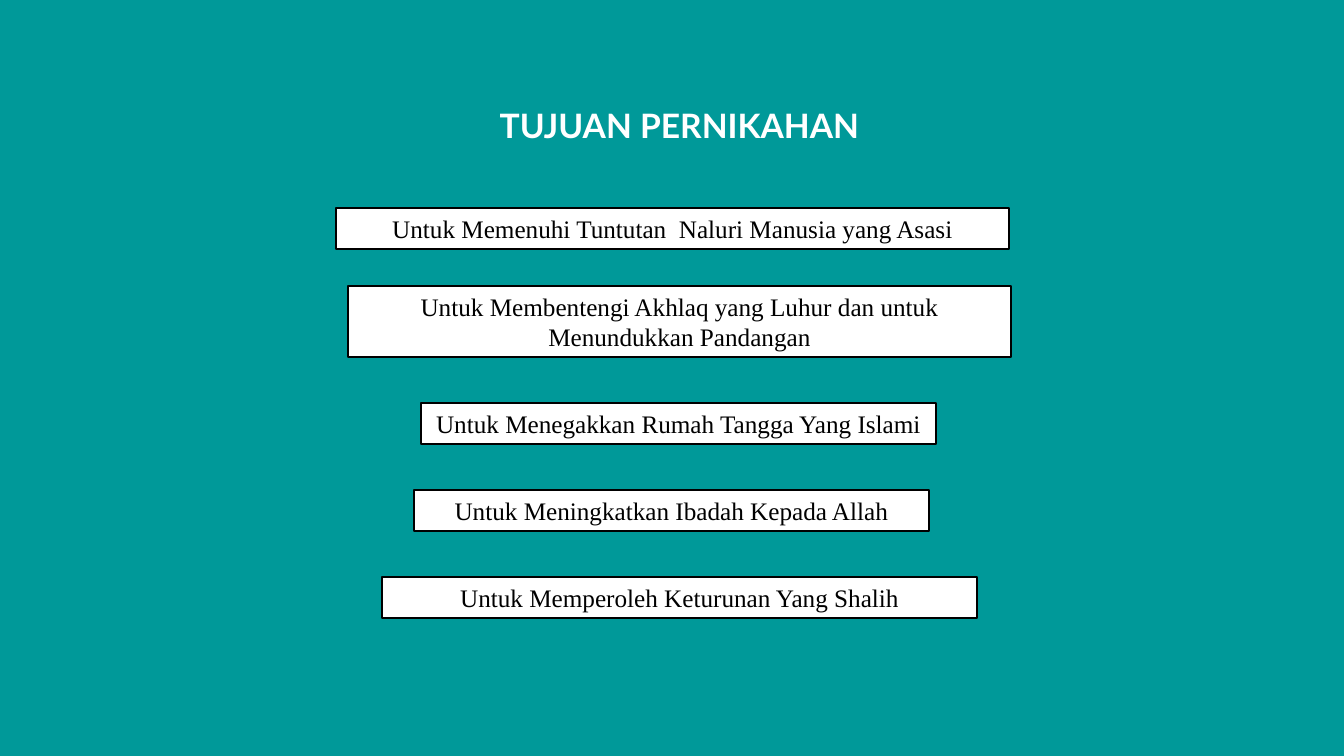
from dataclasses import dataclass

import pptx
import pptx.dml.color
import pptx.enum.shapes
import pptx.enum.text
import pptx.util

EMU_PER_PX = 914400 / 100.8
SLIDE_WIDTH, SLIDE_HEIGHT = 1344, 756


@dataclass(frozen=True)
class Theme:
    teal: str = "009999"
    white: str = "FFFFFF"
    black: str = "000000"
    title_font: str = "Lato"
    goal_font: str = "Times New Roman"
    title_size: int = 24
    goal_size: int = 18
    border: int = 1


@dataclass(frozen=True)
class Goal:
    text: str
    left: int
    top: int
    width: int
    height: int = 41


THEME = Theme()

GOALS = [
    Goal("Untuk Memenuhi Tuntutan  Naluri Manusia yang Asasi", 336, 208, 673),
    Goal("Untuk Membentengi Akhlaq yang Luhur dan untuk Menundukkan Pandangan", 348, 286, 663, 71),
    Goal("Untuk Menegakkan Rumah Tangga Yang Islami", 421, 403, 515),
    Goal("Untuk Meningkatkan Ibadah Kepada Allah", 414, 490, 515),
    Goal("Untuk Memperoleh Keturunan Yang Shalih", 382, 577, 595),
]


def px(length: int) -> int:
    return round(length * EMU_PER_PX)


def rgb(code: str) -> pptx.dml.color.RGBColor:
    return pptx.dml.color.RGBColor.from_string(code)


def add_panel(slide, left: int, top: int, width: int, height: int, fill: str, border: str | None = None):
    panel = slide.shapes.add_shape(
        pptx.enum.shapes.MSO_SHAPE.RECTANGLE, px(left), px(top), px(width), px(height)
    )
    panel.shadow.inherit = False
    panel.fill.solid()
    panel.fill.fore_color.rgb = rgb(fill)
    if border is None:
        panel.line.fill.background()
    else:
        panel.line.color.rgb = rgb(border)
        panel.line.width = pptx.util.Pt(THEME.border)
    return panel


def write_text(shape, text: str, *, font: str, size: int, color: str, bold: bool = False) -> None:
    frame = shape.text_frame
    frame.word_wrap = True
    frame.auto_size = pptx.enum.text.MSO_AUTO_SIZE.SHAPE_TO_FIT_TEXT
    frame.vertical_anchor = pptx.enum.text.MSO_ANCHOR.TOP
    paragraph = frame.paragraphs[0]
    paragraph.alignment = pptx.enum.text.PP_ALIGN.CENTER
    run = paragraph.add_run()
    run.text = text
    run.font.name = font
    run.font.size = pptx.util.Pt(size)
    run.font.bold = bold
    run.font.color.rgb = rgb(color)


def add_goal(slide, goal: Goal) -> None:
    panel = add_panel(slide, goal.left, goal.top, goal.width, goal.height, THEME.white, THEME.black)
    write_text(panel, goal.text, font=THEME.goal_font, size=THEME.goal_size, color=THEME.black)


def main() -> None:
    presentation = pptx.Presentation()
    presentation.slide_width = px(SLIDE_WIDTH)
    presentation.slide_height = px(SLIDE_HEIGHT)
    slide = presentation.slides.add_slide(presentation.slide_layouts[6])

    add_panel(slide, 0, 0, SLIDE_WIDTH, SLIDE_HEIGHT, THEME.teal)
    title = slide.shapes.add_textbox(px(454), px(100), px(451), px(50))
    write_text(
        title, "TUJUAN PERNIKAHAN",
        font=THEME.title_font, size=THEME.title_size, color=THEME.white, bold=True,
    )
    for goal in GOALS:
        add_goal(slide, goal)

    presentation.save("out.pptx")


if __name__ == "__main__":
    main()
